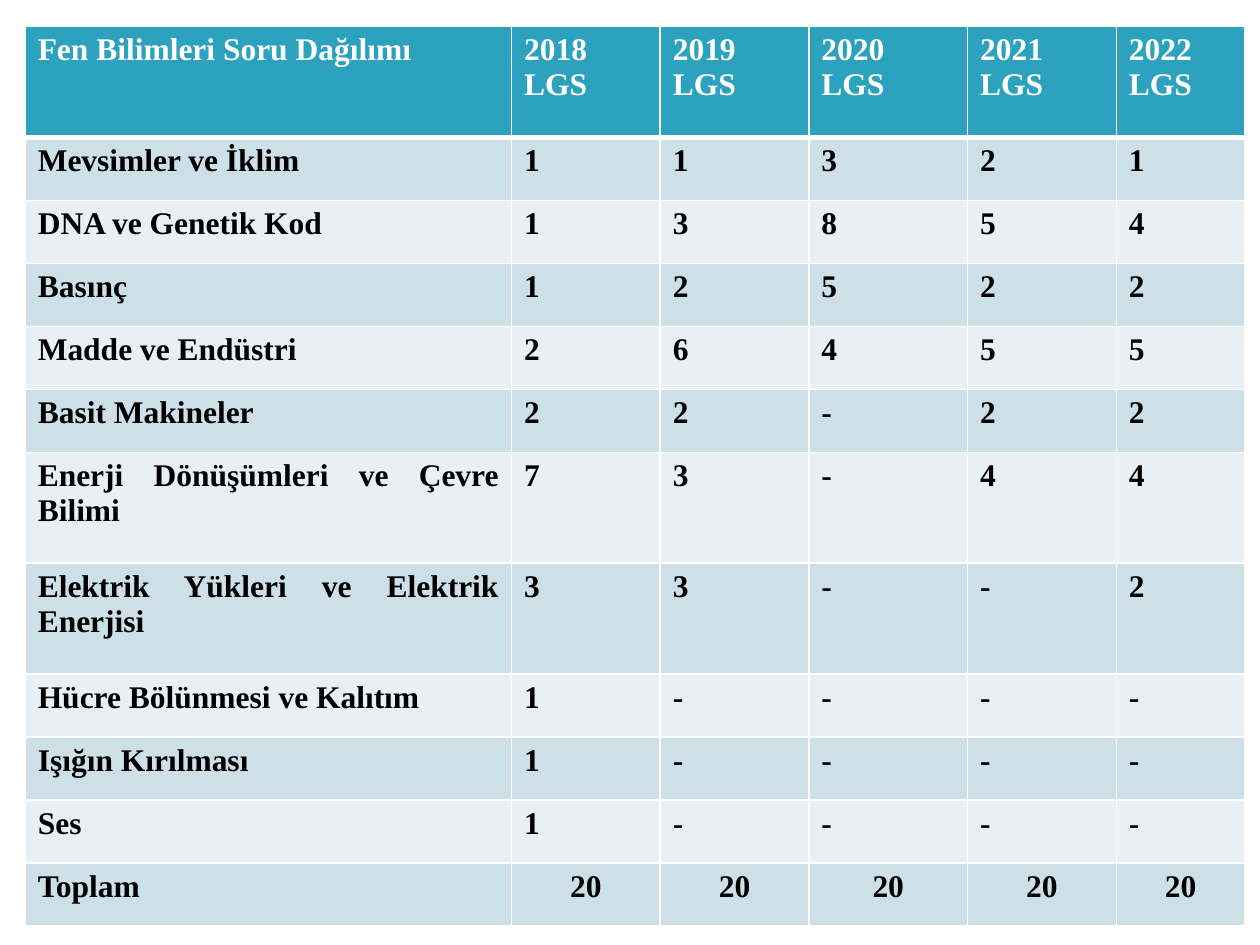
import pptx
import pptx.dml.color
import pptx.enum.text
import pptx.oxml
import pptx.oxml.ns
import pptx.util

ALIGN = pptx.enum.text.PP_ALIGN
THEME = {
    "font": "Times New Roman",
    "size": 18,
    "header_fill": "2DA2BF",
    "header_text": "FFFFFF",
    "body_text": "000000",
    "bands": ["E8F0F4", "CDE0E8"],
    "rule": "FFFFFF",
    "thin": 1,
    "thick": 3,
}
COLUMN_WIDTHS = [3.86, 1.18, 1.18, 1.26, 1.18, 1.02]
SINGLE_ROW, DOUBLE_ROW = 0.5, 0.88
LEFT, TOP = 0.2, 0.21

YEARS = range(2018, 2023)
TOPICS = [
    ("Mevsimler ve İklim", "1 1 3 2 1"),
    ("DNA ve Genetik Kod", "1 3 8 5 4"),
    ("Basınç", "1 2 5 2 2"),
    ("Madde ve Endüstri", "2 6 4 5 5"),
    ("Basit Makineler", "2 2 - 2 2"),
    ("Enerji Dönüşümleri ve Çevre Bilimi", "7 3 - 4 4"),
    ("Elektrik Yükleri ve Elektrik Enerjisi", "3 3 - - 2"),
    ("Hücre Bölünmesi ve Kalıtım", "1 - - - -"),
    ("Işığın Kırılması", "1 - - - -"),
    ("Ses", "1 - - - -"),
    ("Toplam", "20 20 20 20 20"),
]
rows = [["Fen Bilimleri Soru Dağılımı"] + [f"{year} LGS" for year in YEARS]]
rows += [[topic] + counts.split() for topic, counts in TOPICS]
last_row = len(rows) - 1
two_line_rows = {0, 6, 7}
row_heights = [DOUBLE_ROW if index in two_line_rows else SINGLE_ROW
               for index in range(len(rows))]


def add_border(cell, side, points):
    """Draw one edge of a cell; side is L, R, T or B."""
    line = pptx.oxml.parse_xml(
        f'<a:ln{side} {pptx.oxml.ns.nsdecls("a")} w="{pptx.util.Pt(points)}">'
        f'<a:solidFill><a:srgbClr val="{THEME["rule"]}"/></a:solidFill>'
        f'</a:ln{side}>')
    cell._tc.get_or_add_tcPr().append(line)


deck = pptx.Presentation()
deck.slide_width = pptx.util.Inches(10)
deck.slide_height = pptx.util.Inches(7.5)
page = deck.slides.add_slide(deck.slide_layouts[6])

bounds = [LEFT, TOP, sum(COLUMN_WIDTHS), sum(row_heights)]
table = page.shapes.add_table(
    len(rows), len(COLUMN_WIDTHS), *map(pptx.util.Inches, bounds)).table
for column, width in zip(table.columns, COLUMN_WIDTHS):
    column.width = pptx.util.Inches(width)

for row_index, (labels, height) in enumerate(zip(rows, row_heights)):
    table.rows[row_index].height = pptx.util.Inches(height)
    is_header = row_index == 0
    fill = THEME["header_fill"] if is_header else THEME["bands"][row_index % 2]
    ink = THEME["header_text"] if is_header else THEME["body_text"]
    for column_index, label in enumerate(labels):
        cell = table.cell(row_index, column_index)

        # Borders come before the fill in the cell's XML.
        for side in "LRTB":
            heavy = (row_index, side) in [(0, "B"), (1, "T")]
            add_border(cell, side, THEME["thick" if heavy else "thin"])
        cell.fill.solid()
        cell.fill.fore_color.rgb = pptx.dml.color.RGBColor.from_string(fill)

        para = cell.text_frame.paragraphs[0]
        is_total = row_index == last_row and column_index > 0
        para.alignment = ALIGN.CENTER if is_total else ALIGN.JUSTIFY
        span = para.add_run()
        span.text = label
        text_format = {"name": THEME["font"], "bold": True,
                       "size": pptx.util.Pt(THEME["size"])}
        for attribute, value in text_format.items():
            setattr(span.font, attribute, value)
        span.font.color.rgb = pptx.dml.color.RGBColor.from_string(ink)

deck.save("out.pptx")
